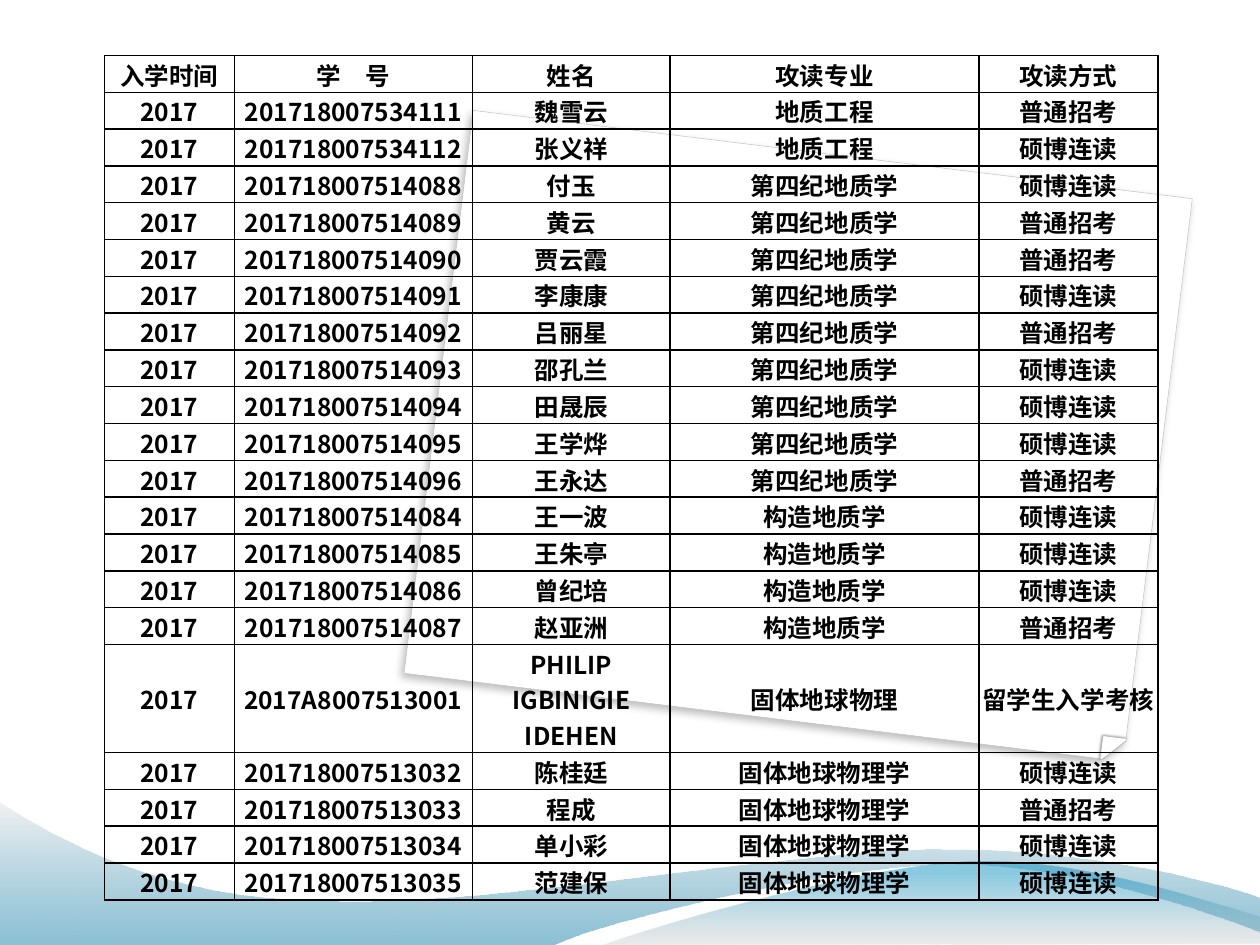
from lxml.etree import SubElement
from pptx import Presentation
from pptx.dml.color import RGBColor
from pptx.enum.shapes import MSO_SHAPE
from pptx.enum.text import MSO_ANCHOR, PP_ALIGN
from pptx.oxml import parse_xml
from pptx.oxml.ns import nsdecls, qn
from pptx.util import Inches, Pt

FONT = "Noto Sans CJK SC"
BLACK = RGBColor(0, 0, 0)
WHITE = RGBColor(0xFF, 0xFF, 0xFF)
SILVER = RGBColor(0xC0, 0xC0, 0xC0)
DEEP_BLUE = RGBColor(0x00, 0x74, 0xA1)
PALE_GRAY = RGBColor(0xE7, 0xE7, 0xE7)
MID_GRAY = RGBColor(0xBD, 0xBD, 0xBD)
SKY_BLUE = RGBColor(0x00, 0x8B, 0xBF)

YEAR = "2017"
GENERAL, COMBINED = "普通招考", "硕博连读"
ENGINEERING, QUATERNARY = "地质工程", "第四纪地质学"
STRUCTURAL, GEOPHYSICS = "构造地质学", "固体地球物理学"
HEADER = ("入学时间", "学　号", "姓名", "攻读专业", "攻读方式")
STUDENTS = [
    ("201718007534111", "魏雪云", ENGINEERING, GENERAL),
    ("201718007534112", "张义祥", ENGINEERING, COMBINED),
    ("201718007514088", "付玉", QUATERNARY, COMBINED),
    ("201718007514089", "黄云", QUATERNARY, GENERAL),
    ("201718007514090", "贾云霞", QUATERNARY, GENERAL),
    ("201718007514091", "李康康", QUATERNARY, COMBINED),
    ("201718007514092", "吕丽星", QUATERNARY, GENERAL),
    ("201718007514093", "邵孔兰", QUATERNARY, COMBINED),
    ("201718007514094", "田晟辰", QUATERNARY, COMBINED),
    ("201718007514095", "王学烨", QUATERNARY, COMBINED),
    ("201718007514096", "王永达", QUATERNARY, GENERAL),
    ("201718007514084", "王一波", STRUCTURAL, COMBINED),
    ("201718007514085", "王朱亭", STRUCTURAL, COMBINED),
    ("201718007514086", "曾纪培", STRUCTURAL, COMBINED),
    ("201718007514087", "赵亚洲", STRUCTURAL, GENERAL),
    ("2017A8007513001", "PHILIP IGBINIGIE IDEHEN", "固体地球物理", "留学生入学考核"),
    ("201718007513032", "陈桂廷", GEOPHYSICS, COMBINED),
    ("201718007513033", "程成", GEOPHYSICS, GENERAL),
    ("201718007513034", "单小彩", GEOPHYSICS, COMBINED),
    ("201718007513035", "范建保", GEOPHYSICS, COMBINED),
]
COLUMN_WIDTHS = (1.03, 1.89, 1.57, 2.45, 1.42)
ROW_HEIGHT, TALL_ROW_HEIGHT, TALL_ROW = 0.27, 0.64, 16

LARGE_WAVE = [
    [(0.01, 1.14)],
    [(4.41, 1.14)],
    [(4.77, 0.96), (6.65, 0.5), (7.59, 0.5)],
    [(8.54, 0.5), (9.59, 0.88), (10.01, 1.04)],
    [(10.02, 0.77)],
    [(9.84, 0.69), (8.71, 0.37), (7.47, 0.38)],
    [(6.23, 0.38), (3.83, 0.85), (2.58, 0.79)],
    [(1.3, 0.78), (0.47, 0.3), (0, 0)],
]
SMALL_WAVE = [
    [(0, 0.7)],
    [(0.3, 0.58), (2.03, 0.07), (2.9, 0.04)],
    [(3.77, 0), (4.82, 0.37), (5.21, 0.48)],
    [(5.21, 0.69)],
]


def bend_segments(shape, segments):
    """Merge each three lines of a cubic segment into one curve."""
    lines = iter(list(shape._element.iter(qn("a:lnTo"))))
    for segment in segments[1:]:
        parts = [next(lines) for _ in segment]
        if len(parts) == 3:
            curve = parse_xml(f'<a:cubicBezTo {nsdecls("a")}/>')
            parts[0].addprevious(curve)
            for part in parts:
                curve.append(part[0])
                part.getparent().remove(part)


def add_wave(slide, left, top, segments, stops):
    """Draw a translucent gradient wave from its top left corner."""
    points = [(Inches(left + x), Inches(top + y)) for segment in segments for x, y in segment]
    builder = slide.shapes.build_freeform(*points[0], scale=1.0)
    builder.add_line_segments(points[1:], close=True)
    shape = builder.convert_to_shape()
    bend_segments(shape, segments)
    shape.shadow.inherit = False
    shape.line.fill.background()
    shape.fill.gradient()
    shape.fill.gradient_angle = 90
    for gradient_stop, (position, color, _) in zip(shape.fill.gradient_stops, stops):
        gradient_stop.position = position
        gradient_stop.color.rgb = color
    colors = shape._element.spPr.iter(qn("a:srgbClr"))
    for element, (_, _, opacity) in zip(list(colors), stops):
        SubElement(element, qn("a:alpha"), val=str(opacity * 1000))


def add_paper_part(slide, kind, box, line, shadow):
    """Draw one tilted, flipped white part of the paper sheet."""
    shape = slide.shapes.add_shape(kind, *map(Inches, box))
    shape.rotation = 7
    shape._element.spPr.xfrm.set("flipV", "1")
    shape.fill.solid()
    shape.fill.fore_color.rgb = WHITE
    line_color, line_width = line
    shape.line.color.rgb = line_color
    shape.line.width = Pt(line_width)
    shape.shadow.inherit = False
    opacity, blur, distance, angle = shadow
    shape._element.spPr.find(qn("a:effectLst")).append(parse_xml(
        f'<a:outerShdw {nsdecls("a")} blurRad="{Pt(blur)}" dist="{Pt(distance)}" '
        f'dir="{angle * 60000}" algn="tl" rotWithShape="0"><a:srgbClr val="{BLACK}">'
        f'<a:alpha val="{opacity * 1000}"/></a:srgbClr></a:outerShdw>'
    ))
    return shape


def add_background(slide):
    """Place the paper sheet, its folded corner and the two waves."""
    sheet = add_paper_part(slide, MSO_SHAPE.SNIP_ROUND_RECTANGLE,
                           (3.46, 1.21, 5.75, 4.5), (SILVER, 0.25), (25, 5, 3, 125))
    sheet.adjustments[0] = 0
    sheet.adjustments[1] = 0.036
    add_paper_part(slide, MSO_SHAPE.RIGHT_TRIANGLE,
                   (8.75, 5.86, 0.17, 0.17), (WHITE, 1), (47, 1.6, 0.5, 215))
    add_wave(slide, -0.01, 6.36, LARGE_WAVE, [(0, DEEP_BLUE, 45), (1, PALE_GRAY, 55)])
    add_wave(slide, 4.79, 6.8, SMALL_WAVE, [(0, MID_GRAY, 30), (0.8, SKY_BLUE, 45)])


def fill_cell(cell, text):
    """Write centred bold text in a clear cell with black borders."""
    cell.margin_left = cell.margin_top = cell.margin_right = Pt(0.6)
    cell.margin_bottom = 0
    cell.vertical_anchor = MSO_ANCHOR.MIDDLE
    cell.fill.background()
    properties = cell._tc.get_or_add_tcPr()
    for index, side in enumerate("LRTB"):
        properties.insert(index, parse_xml(
            f'<a:ln{side} {nsdecls("a")} w="{Pt(1)}"><a:solidFill>'
            f'<a:srgbClr val="{BLACK}"/></a:solidFill></a:ln{side}>'
        ))
    paragraph = cell.text_frame.paragraphs[0]
    paragraph.alignment = PP_ALIGN.CENTER
    run = paragraph.add_run()
    run.text = text
    run.font.name = FONT
    run.font.size = Pt(14)
    run.font.bold = True
    run.font.color.rgb = BLACK
    SubElement(run._r.get_or_add_rPr(), qn("a:ea"), typeface=FONT)


def add_student_table(slide, left, top, width, height):
    """Place the table of enrolled students in the given box."""
    rows = [HEADER] + [(YEAR, *student) for student in STUDENTS]
    table = slide.shapes.add_table(
        len(rows), len(HEADER), *map(Inches, (left, top, width, height))).table
    table.first_row = False
    table.horz_banding = False
    for column, column_width in zip(table.columns, COLUMN_WIDTHS):
        column.width = Inches(column_width)
    for index, (row, texts) in enumerate(zip(table.rows, rows)):
        row.height = Inches(TALL_ROW_HEIGHT if index == TALL_ROW else ROW_HEIGHT)
        for cell, text in zip(row.cells, texts):
            fill_cell(cell, text)


def main():
    """Build and save the presentation."""
    presentation = Presentation()
    presentation.slide_width = Inches(10)
    presentation.slide_height = Inches(7.5)
    slide = presentation.slides.add_slide(presentation.slide_layouts[6])
    add_background(slide)
    add_student_table(slide, 0.83, 0.44, 8.36, 6.14)
    presentation.save("out.pptx")


if __name__ == "__main__":
    main()
